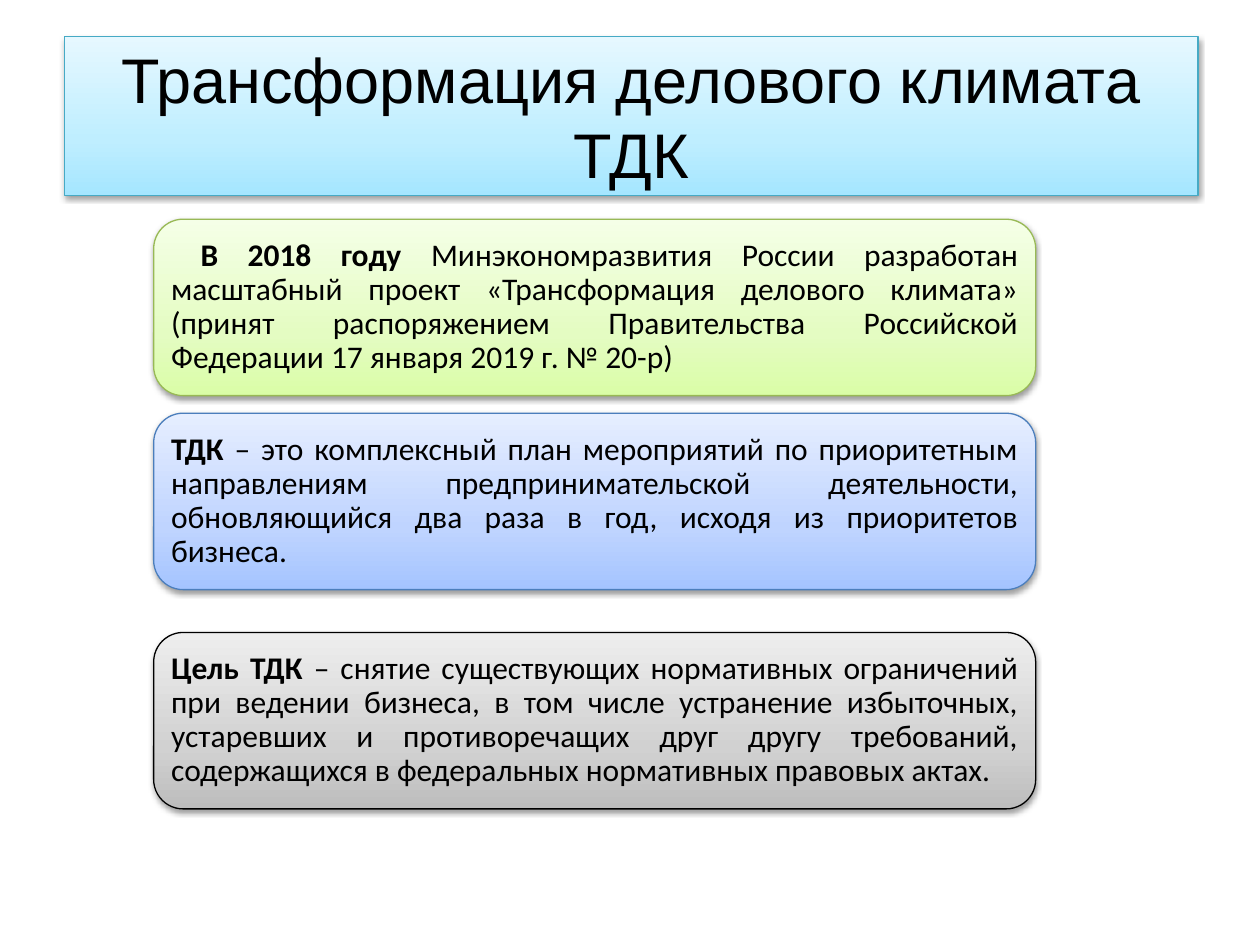
from lxml import etree
from pptx import Presentation
from pptx.dml.color import RGBColor
from pptx.enum.shapes import MSO_SHAPE as Shape
from pptx.enum.text import MSO_ANCHOR as Anchor, PP_ALIGN as Align
from pptx.oxml import parse_xml
from pptx.oxml.ns import nsdecls, qn
from pptx.util import Inches, Pt


def color(value):
    return RGBColor.from_string(value)


class SlideBuilder:
    text_color = "000000"
    line_width = Pt(0.75)
    stop_positions = (0, 35, 100)

    def __init__(self, slide):
        self.slide = slide

    def panel(self, kind, left, top, width, height, stops, line):
        """Add a gradient panel with a thin outline and a soft shadow."""
        shape = self.slide.shapes.add_shape(
            kind, Inches(left), Inches(top), Inches(width), Inches(height))
        shape.line.color.rgb = color(line)
        shape.line.width = self.line_width
        self.gradient(shape, stops)
        self.shadow(shape)
        shape.text_frame.word_wrap = True
        shape.text_frame.vertical_anchor = Anchor.MIDDLE
        return shape

    def gradient(self, shape, stops):
        """Fill from bottom to top through the given colours."""
        shape.fill.gradient()
        shape.fill.gradient_angle = 90
        fill = shape.fill._fill._gradFill
        stop_list = fill.find(qn("a:gsLst"))
        for stop in list(stop_list):
            stop_list.remove(stop)
        for position, value in zip(self.stop_positions, stops):
            stop = etree.SubElement(stop_list, qn("a:gs"), pos=str(position * 1000))
            etree.SubElement(stop, qn("a:srgbClr"), val=value)
        fill.find(qn("a:lin")).set("ang", "16200000")

    def shadow(self, shape):
        shape.shadow.inherit = False
        effects = shape._element.spPr.find(qn("a:effectLst"))
        effects.append(parse_xml(
            f'<a:outerShdw {nsdecls("a")} blurRad="{Pt(3.1)}" dist="{Pt(1.6)}" '
            'dir="5400000" rotWithShape="0"><a:srgbClr val="000000">'
            '<a:alpha val="38000"/></a:srgbClr></a:outerShdw>'))

    def text(self, shape, runs, font, size, align, spacing=1.0):
        """Write (text, bold) runs into one paragraph."""
        paragraph = shape.text_frame.paragraphs[0]
        paragraph.alignment = align
        paragraph.line_spacing = spacing
        for words, bold in runs:
            run = paragraph.add_run()
            run.text = words
            run.font.name = font
            run.font.size = Pt(size)
            run.font.bold = bold
            run.font.color.rgb = color(self.text_color)

    def title(self, words):
        shape = self.panel(Shape.RECTANGLE, 0.51, 0.29, 9, 1.26,
                           ("A5E6FF", "BFEEFF", "E6F8FF"), "46AAC5")
        self.text(shape, [(words, False)], "Arial", 36, Align.CENTER)

    def card(self, top, stops, line, runs):
        shape = self.panel(Shape.ROUNDED_RECTANGLE, 1.22, top, 7, 1.4, stops, line)
        frame = shape.text_frame
        frame.margin_left = frame.margin_right = Inches(0.07)
        frame.margin_top = frame.margin_bottom = Inches(0.07)
        self.text(shape, runs, "Calibri", 18, Align.JUSTIFY, 0.9)


CARDS = [
    (1.74, ("DAFDA7", "E4FCC2", "F5FFE7"), "98B955", [
        (" ", False),
        ("В 2018 году ", True),
        ("Минэкономразвития России разработан масштабный проект «Трансформация "
         "делового климата» (принят распоряжением Правительства Российской "
         "Федерации 17 января 2019 г. № 20-р)", False)]),
    (3.28, ("A4C4FF", "BFD4FF", "E6EEFF"), "4B7EBC", [
        ("ТДК", True),
        (" – это комплексный план мероприятий по приоритетным направлениям "
         "предпринимательской деятельности, обновляющийся два раза в год, "
         "исходя из приоритетов бизнеса.", False)]),
    (5.02, ("BDBDBD", "D1D1D1", "EEEEEE"), "000000", [
        ("Цель ТДК ", True),
        ("– снятие существующих нормативных ограничений при ведении бизнеса, "
         "в том числе устранение избыточных, устаревших и противоречащих друг "
         "другу требований, содержащихся в федеральных нормативных правовых "
         "актах.", False)]),
]


def main():
    presentation = Presentation()
    presentation.slide_width = Inches(10)
    presentation.slide_height = Inches(7.5)
    slide = presentation.slides.add_slide(presentation.slide_layouts[6])
    builder = SlideBuilder(slide)

    # Title banner
    builder.title("Трансформация делового климата ТДК")

    # Cards: background, definition, goal
    for top, stops, line, runs in CARDS:
        builder.card(top, stops, line, runs)

    presentation.save("out.pptx")


if __name__ == "__main__":
    main()
